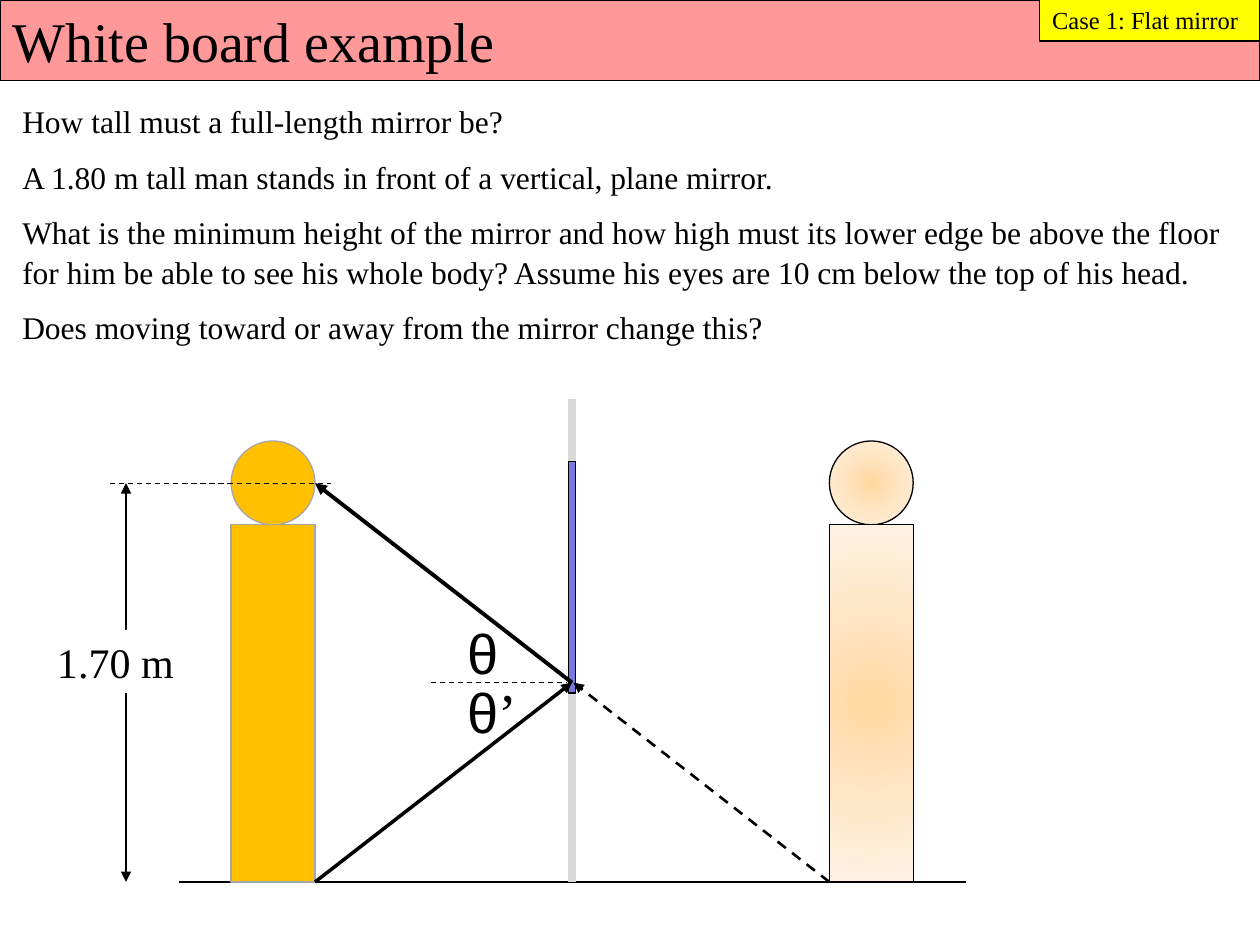
from lxml.etree import SubElement
from pptx import Presentation
from pptx.dml.color import RGBColor
from pptx.enum.dml import MSO_LINE as Dash
from pptx.enum.shapes import MSO_CONNECTOR as Connector, MSO_SHAPE as Shape
from pptx.enum.text import MSO_ANCHOR as Anchor, MSO_AUTO_SIZE as AutoSize, PP_ALIGN as Align
from pptx.oxml import parse_xml
from pptx.oxml.ns import nsdecls, qn
from pptx.util import Cm, Pt

SERIF, SANS = "Times New Roman", "Arial"
BLACK, GOLD, GREY = "000000", "FFC000", "A6A6A6"
GLOW = ["FFD8A0", "FFE6C5", "FFF2E3"]
FLOOR, EYE, HIT = 17.78, 9.74, 13.76
MIRROR = 11.53
MAN, IMAGE, GIRTH = 4.66, 16.72, 1.69
HEAD_TOP, BODY_TOP = 8.89, 10.58
MAN_FRONT = MAN + GIRTH


def colour(value):
    return RGBColor.from_string(value)


def write(box, *paragraphs, size=18, font=SERIF, before=0, spacing=None):
    frame = box.text_frame
    frame.word_wrap = True
    frame.auto_size = AutoSize.SHAPE_TO_FIT_TEXT
    frame.vertical_anchor = Anchor.TOP
    for index, runs in enumerate(paragraphs):
        para = frame.paragraphs[0] if index == 0 else frame.add_paragraph()
        para.alignment = Align.LEFT
        para.space_before = Pt(before if index else 0)
        if spacing:
            para.line_spacing = spacing
        for text, face in [(runs, font)] if isinstance(runs, str) else runs:
            span = para.add_run()
            span.text = text
            span.font.name = face
            span.font.size = Pt(size)
            span.font.color.rgb = colour(BLACK)


class Board:
    def __init__(self, page, line=BLACK, width=0.75):
        self.page = page
        self.line = line
        self.width = width

    def group(self):
        return self.page.shapes.add_group_shape()

    def text(self, left, top, width, height):
        return self.page.shapes.add_textbox(Cm(left), Cm(top), Cm(width), Cm(height))

    def shape(self, left, top, width, height, fill, line=BLACK, kind=Shape.RECTANGLE, group=None):
        shapes = (group or self.page).shapes
        box = shapes.add_shape(kind, Cm(left), Cm(top), Cm(width), Cm(height))
        box.shadow.inherit = False
        if isinstance(fill, list):
            self.glow(box, fill)
        else:
            box.fill.solid()
            box.fill.fore_color.rgb = colour(fill)
        if line:
            box.line.color.rgb = colour(line)
            box.line.width = Pt(self.width)
        else:
            box.line.fill.background()
        return box

    def glow(self, box, colours):
        step = 100000 // (len(colours) - 1)
        stops = "".join(
            f'<a:gs pos="{index * step}"><a:srgbClr val="{value}"/></a:gs>'
            for index, value in enumerate(colours)
        )
        gradient = parse_xml(
            f'<a:gradFill {nsdecls("a")} rotWithShape="1"><a:gsLst>{stops}</a:gsLst>'
            '<a:path path="circle"><a:fillToRect l="50000" t="50000" r="50000" b="50000"/>'
            "</a:path></a:gradFill>"
        )
        box._element.spPr.find(qn("a:prstGeom")).addnext(gradient)

    def connector(self, start, end, line=None, width=None, dashed=False, arrows=(), group=None):
        shapes = (group or self.page).shapes
        points = [Cm(value) for value in (*start, *end)]
        link = shapes.add_connector(Connector.STRAIGHT, *points)
        link.line.color.rgb = colour(line or self.line)
        link.line.width = Pt(width or self.width)
        if dashed:
            link.line.dash_style = Dash.DASH
        for arrow in arrows:
            SubElement(link.line._get_or_add_ln(), qn(f"a:{arrow}"), type="triangle")
        SubElement(link._element.spPr, qn("a:effectLst"))
        return link

    def person(self, left, fill, line):
        group = self.group()
        self.shape(left, HEAD_TOP, GIRTH, GIRTH, fill, line, Shape.OVAL, group)
        self.shape(left, BODY_TOP, GIRTH, FLOOR - BODY_TOP, fill, line, group=group)


def main():
    deck = Presentation()
    deck.slide_width, deck.slide_height = Cm(25.4), Cm(19.05)
    board = Board(deck.slides.add_slide(deck.slide_layouts[6]))

    write(
        board.text(0.2, 1.9, 24.97, 5.26),
        "How tall must a full-length mirror be?",
        "A 1.80 m tall man stands in front of a vertical, plane mirror.",
        "What is the minimum height of the mirror and how high must its lower edge be above "
        "the floor for him be able to see his whole body? Assume his eyes are 10 cm below "
        "the top of his head.",
        "Does moving toward or away from the mirror change this?",
        before=9, spacing=1.05,
    )
    write(board.shape(0, 0, 25.4, 1.63, "FF9999"), "White board example", size=32)

    board.connector((3.6, FLOOR), (19.48, FLOOR))
    wall = board.group()
    board.connector((MIRROR, 8.05), (MIRROR, FLOOR), "D9D9D9", 4.5, group=wall)
    board.shape(MIRROR - 0.07, 9.31, 0.14, 4.66, "7878DE", group=wall)

    board.person(MAN, GOLD, GREY)
    board.connector((MAN_FRONT, FLOOR), (MIRROR, HIT), width=2, arrows=["tailEnd"])
    board.connector((MIRROR, HIT), (MAN_FRONT, EYE), width=2.25, arrows=["tailEnd"])
    board.connector((8.68, HIT), (11.43, HIT), dashed=True)

    board.person(IMAGE, GLOW, BLACK)
    board.connector((2.22, EYE), (6.67, EYE), dashed=True)
    board.connector((2.54, EYE), (2.54, FLOOR), arrows=["headEnd", "tailEnd"])
    write(board.shape(0.9, 12.7, 3.18, 1.27, "FFFFFF", None), "1.70 m", size=24)
    board.connector((IMAGE, FLOOR), (MIRROR + 0.03, HIT), width=1.5, dashed=True, arrows=["tailEnd"])

    write(board.text(9.17, 12.34, 2.11, 1.63), "θ", size=32, font=SANS)
    write(board.text(9.17, 13.54, 2.11, 1.63), [("θ", SANS), ("’", SERIF)], size=32)
    write(board.shape(20.96, -0.03, 4.44, 0.86, "FFFF00"), "Case 1: Flat mirror", size=14)

    deck.save("out.pptx")


if __name__ == "__main__":
    main()
